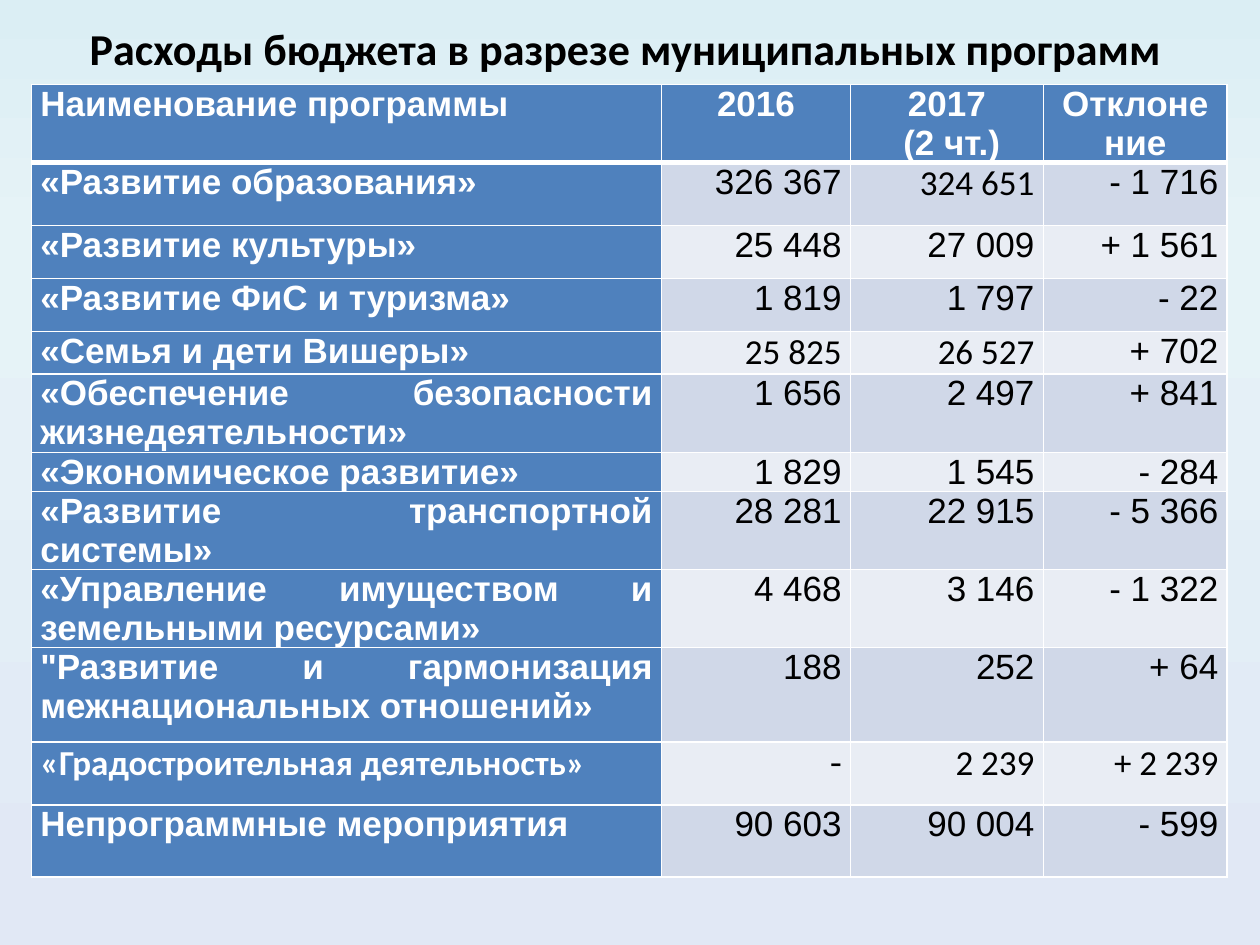
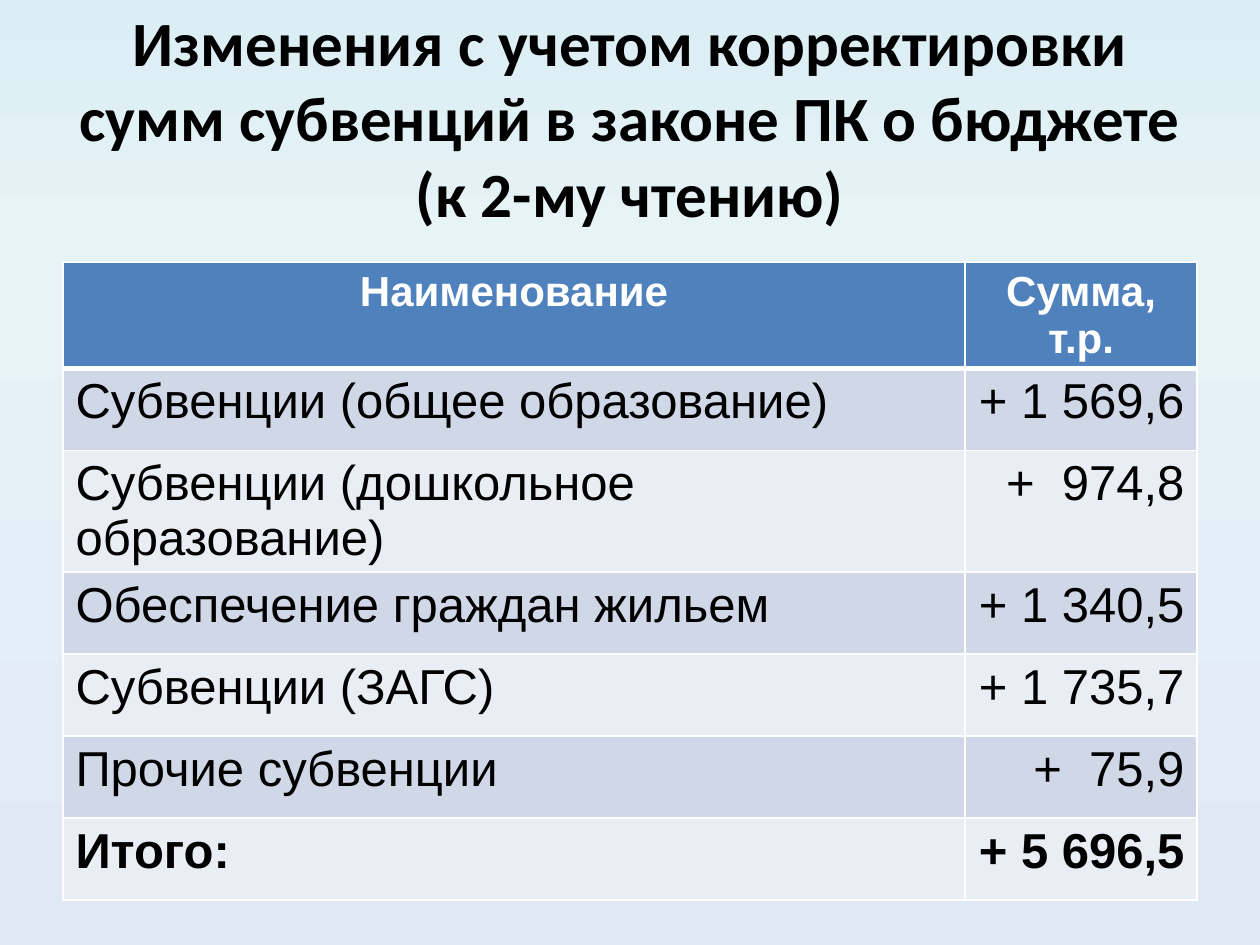
import copy

import lxml.etree
import pptx
import pptx.dml.color
import pptx.enum.text
import pptx.oxml.ns
import pptx.util

Inches = pptx.util.Inches
Pt = pptx.util.Pt
RGBColor = pptx.dml.color.RGBColor
Align = pptx.enum.text.PP_ALIGN
qn = pptx.oxml.ns.qn

# Shared colours and fonts
BLUE = RGBColor(0x4F, 0x81, 0xBD)
BAND_DARK = RGBColor(0xD0, 0xD8, 0xE8)
BAND_LIGHT = RGBColor(0xE9, 0xED, 0xF4)
WHITE = RGBColor(0xFF, 0xFF, 0xFF)
BLACK = RGBColor(0x00, 0x00, 0x00)
SKY = [(0, RGBColor(0xDB, 0xEE, 0xF4)),
       (0.25, RGBColor(0xE6, 0xF3, 0xF7)),
       (1, RGBColor(0xE1, 0xE8, 0xF5))]
BODY_FONT = "Arial"
TITLE_FONT = "Calibri"

# Slide 1: spending by programme
PROGRAMS = [
    ("Наименование программы", "2016", "2017\n (2 чт.)", "Отклоне\nние"),
    ("«Развитие образования»", "326 367", "324 651", "- 1 716"),
    ("«Развитие культуры»", "25 448", "27 009", "+ 1 561"),
    ("«Развитие ФиС и туризма»", "1 819", "1 797", "- 22"),
    ("«Семья и дети Вишеры»", "25 825", "26 527", "+ 702"),
    ("«Обеспечение безопасности жизнедеятельности»", "1 656", "2 497", "+ 841"),
    ("«Экономическое развитие»", "1 829", "1 545", "- 284"),
    ("«Развитие транспортной системы»", "28 281", "22 915", "- 5 366"),
    ("«Управление имуществом и земельными ресурсами»", "4 468", "3 146", "- 1 322"),
    ("\"Развитие и гармонизация межнациональных отношений»", "188", "252", "+ 64"),
    ("«Градостроительная деятельность»", "-", "2 239", "+ 2 239"),
    ("Непрограммные мероприятия", "90 603", "90 004", "- 599"),
]
PROGRAM_HEIGHTS = [0.59, 0.5, 0.42, 0.42, 0.31, 0.59, 0.31, 0.5, 0.59, 0.75, 0.5, 0.57]
PROGRAM_FONTS = dict.fromkeys(
    [(1, 2), (4, 1), (4, 2), (10, 0), (10, 2), (10, 3)], "Calibri")
PROGRAM_FONTS[10, 1] = "Times New Roman"

# Slide 2: changes in subventions
SUBVENTIONS = [
    ("Наименование", "Сумма, т.р."),
    ("Субвенции (общее образование)", "+ 1 569,6"),
    ("Субвенции (дошкольное образование)", "+  974,8"),
    ("Обеспечение граждан жильем", "+ 1 340,5"),
    ("Субвенции (ЗАГС)", "+ 1 735,7"),
    ("Прочие субвенции", "+  75,9"),
    ("Итого:", "+ 5 696,5"),
]


def add_page(deck):
    """Add a blank page with the shared vertical gradient."""
    page = deck.slides.add_slide(deck.slide_layouts[6])
    fill = page.background.fill
    fill.gradient()
    fill.gradient_angle = 270
    stop_list = next(page.element.iter(qn("a:gsLst")))
    stop_list.insert(1, copy.deepcopy(stop_list[0]))
    for stop, (position, color) in zip(fill.gradient_stops, SKY):
        stop.position = position
        stop.color.rgb = color
    return page


def write(frame, text, align, size, font, color, bold):
    """Write each line of the text as a paragraph of one run."""
    for index, line in enumerate(text.split("\n")):
        para = frame.add_paragraph() if index else frame.paragraphs[0]
        para.alignment = align
        span = para.add_run()
        span.text = line
        span.font.size = Pt(size)
        span.font.name = font
        span.font.bold = bold
        span.font.color.rgb = color


def add_title(page, text, left, top, width, height, size):
    box = page.shapes.add_textbox(Inches(left), Inches(top), Inches(width), Inches(height))
    frame = box.text_frame
    frame.word_wrap = True
    frame.auto_size = pptx.enum.text.MSO_AUTO_SIZE.NONE
    frame.vertical_anchor = pptx.enum.text.MSO_ANCHOR.MIDDLE
    write(frame, text, Align.CENTER, size, TITLE_FONT, BLACK, True)


def set_borders(cell, top, bottom):
    """Draw white cell edges; the side edges are 1 pt wide."""
    properties = cell._tc.get_or_add_tcPr()
    edges = [("L", 1), ("R", 1), ("T", top), ("B", bottom)]
    for index, (side, width) in enumerate(edges):
        line = lxml.etree.Element(qn("a:ln" + side), w=str(Pt(width)))
        solid = lxml.etree.SubElement(line, qn("a:solidFill"))
        lxml.etree.SubElement(solid, qn("a:srgbClr"), val=str(WHITE))
        properties.insert(index, line)


def add_grid(page, rows, left, top, widths, heights):
    """Add an empty table with the given column widths and row heights."""
    table = page.shapes.add_table(
        len(rows), len(widths), Inches(left), Inches(top),
        Inches(sum(widths)), Inches(sum(heights))).table
    table.horz_banding = False
    for column, width in zip(table.columns, widths):
        column.width = Inches(width)
    for row, height in zip(table.rows, heights):
        row.height = Inches(height)
    return table


def paint_cell(cell, row, is_header):
    """Fill a cell by its band and put the thick edge under the top row."""
    cell.fill.solid()
    band = BAND_DARK if row % 2 else BAND_LIGHT
    cell.fill.fore_color.rgb = BLUE if is_header else band
    set_borders(cell, 3 if row == 1 else 1, 3 if row == 0 else 1)


def add_program_table(page):
    table = add_grid(page, PROGRAMS, 0.25, 0.67, [5, 1.5, 1.53, 1.46], PROGRAM_HEIGHTS)
    for row, texts in enumerate(PROGRAMS):
        for column, text in enumerate(texts):
            cell = table.cell(row, column)
            is_header = row == 0 or column == 0
            paint_cell(cell, row, is_header)
            cell.margin_left = cell.margin_right = Inches(0.07)
            cell.margin_top = cell.margin_bottom = 0
            if column == 0:
                align = Align.JUSTIFY
            else:
                align = Align.RIGHT if row else Align.CENTER
            write(cell.text_frame, text, align, 20,
                  PROGRAM_FONTS.get((row, column), BODY_FONT),
                  WHITE if is_header else BLACK, is_header)


def add_subvention_table(page):
    heights = [0.59] + [0.65] * (len(SUBVENTIONS) - 1)
    table = add_grid(page, SUBVENTIONS, 0.5, 2.08, [7.16, 1.84], heights)
    total_row = len(SUBVENTIONS) - 1
    for row, texts in enumerate(SUBVENTIONS):
        for column, text in enumerate(texts):
            cell = table.cell(row, column)
            paint_cell(cell, row, row == 0)
            if row == 0:
                align = Align.CENTER
            else:
                align = Align.RIGHT if column else Align.LEFT
            write(cell.text_frame, text, align, 28 if row else 24, BODY_FONT,
                  BLACK if row else WHITE, row in (0, total_row))


def main():
    deck = pptx.Presentation()
    deck.slide_width = Inches(10)
    deck.slide_height = Inches(7.5)

    page = add_page(deck)
    add_title(page, "Расходы бюджета в разрезе муниципальных программ",
              0.28, 0.17, 9.37, 0.42, 25.2)
    add_program_table(page)

    page = add_page(deck)
    add_title(page, "Изменения с учетом корректировки сумм субвенций "
              "в законе ПК о бюджете (к 2-му чтению)", 0.5, 0.3, 9, 1.25, 36)
    add_subvention_table(page)

    deck.save("out.pptx")


if __name__ == "__main__":
    main()
